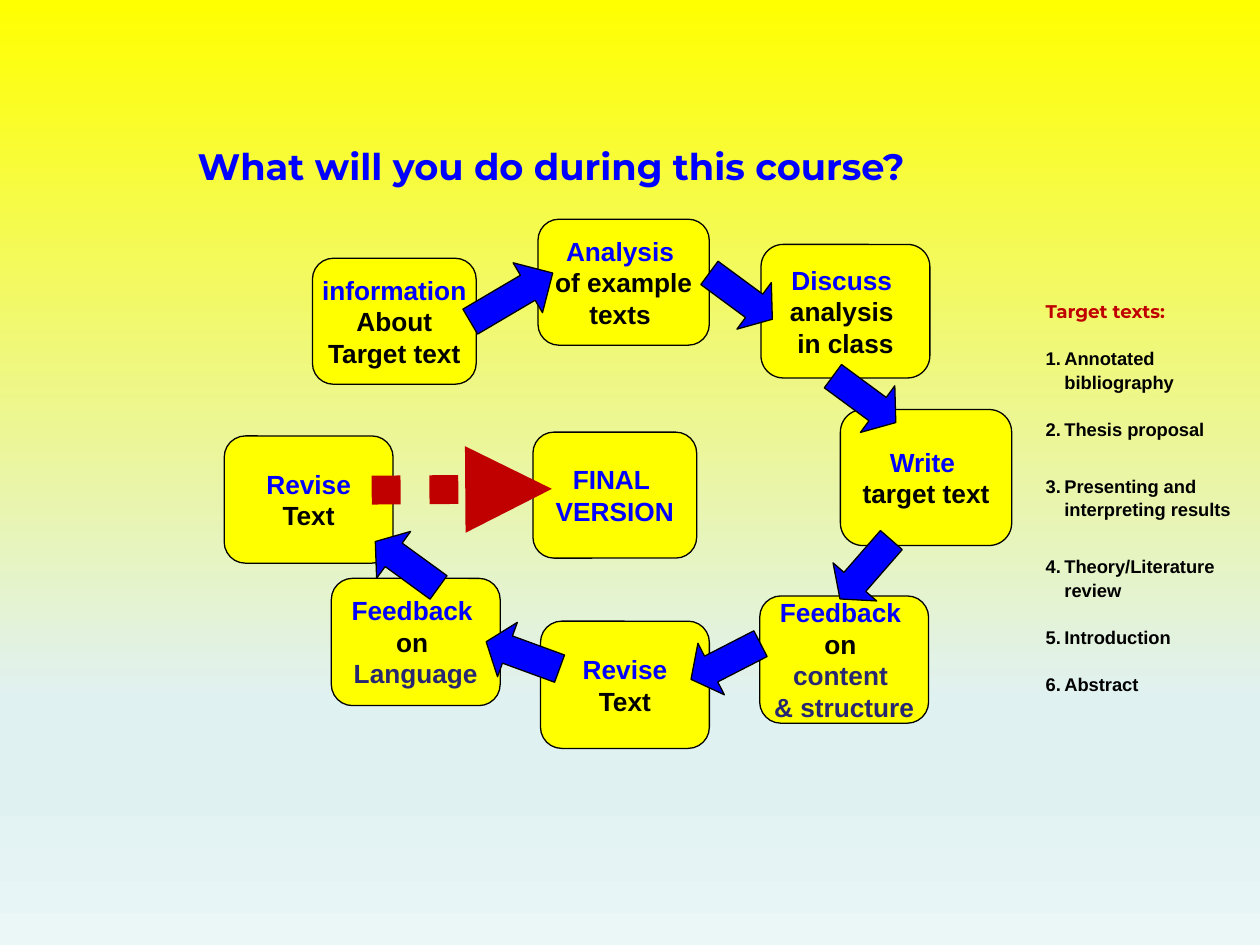
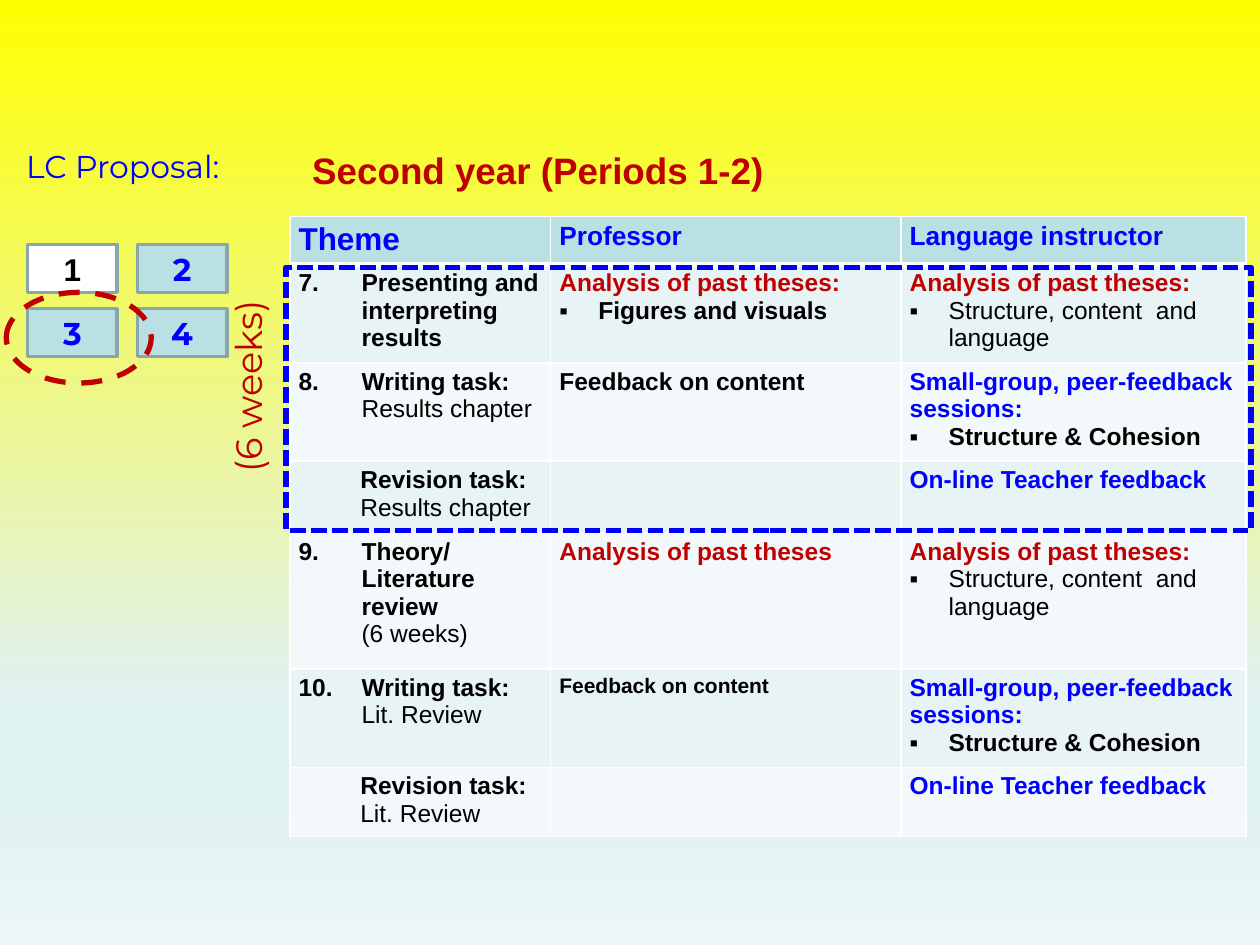
from dataclasses import dataclass, replace

from lxml.etree import SubElement
from pptx import Presentation
from pptx.dml.color import RGBColor
from pptx.enum.dml import MSO_LINE as Dash
from pptx.enum.shapes import MSO_CONNECTOR as Link, MSO_SHAPE as Shape
from pptx.enum.text import MSO_ANCHOR as Anchor, PP_ALIGN as Align
from pptx.oxml.ns import qn
from pptx.util import Inches, Pt

YELLOW = RGBColor(0xFF, 0xFF, 0x00)
BLUE = RGBColor(0x00, 0x00, 0xFF)
NAVY = RGBColor(0x26, 0x26, 0x73)
RED = RGBColor(0xC0, 0x00, 0x00)
BLACK = RGBColor(0x00, 0x00, 0x00)
WHITE = RGBColor(0xFF, 0xFF, 0xFF)
TEAL = RGBColor(0xBB, 0xE0, 0xE3)
TEAL_EDGE = RGBColor(0x8A, 0xA6, 0xA8)
BAND_DARK = RGBColor(0xE7, 0xF3, 0xF4)
BAND_LIGHT = RGBColor(0xF3, 0xF9, 0xFA)
SKY = RGBColor(0xE0, 0xF1, 0xF2)
SKY_PALE = RGBColor(0xEB, 0xF6, 0xF7)

BACKDROP = [(0, YELLOW), (74, SKY), (83, SKY), (100, SKY_PALE)]
COLUMNS, ROWS = 100, 75  # slide grid
CELL = Inches(0.1)
TIGHT = (0.7, 0.4)  # side and top margins


@dataclass
class Box:
    left: float
    top: float
    width: float
    height: float

    def inner(self, left, top, width, height):
        return Box(self.left + left, self.top + top, width, height)

    def emu(self):
        return [round(n * CELL) for n in (self.left, self.top, self.width, self.height)]


@dataclass
class Style:
    size: float
    color: RGBColor = BLACK
    bold: bool = True
    font: str = "Arial"


@dataclass
class Para:
    runs: list  # (text, Style) pairs
    mark: object = None  # bullet sign or first number
    indent: float = 0
    hanging: float = 0
    after: float = 0
    leading: float = 1.0
    align: object = Align.LEFT


def write(frame, paras, margins=None, wrap=True):
    frame.word_wrap = wrap
    if margins:
        frame.margin_left = frame.margin_right = round(margins[0] * CELL)
        frame.margin_top = frame.margin_bottom = round(margins[1] * CELL)
    for index, para in enumerate(paras):
        line = frame.add_paragraph() if index else frame.paragraphs[0]
        line.alignment = para.align
        line.line_spacing = para.leading
        line.space_after = Pt(para.after)
        props = line._p.get_or_add_pPr()
        props.set("marL", str(round(para.indent * CELL)))
        props.set("indent", str(round(-para.hanging * CELL)))
        if isinstance(para.mark, int):
            SubElement(props, qn("a:buFont"), typeface="Arial")
            SubElement(props, qn("a:buAutoNum"), type="arabicPeriod", startAt=str(para.mark))
        elif para.mark:
            SubElement(props, qn("a:buFont"), typeface="Arial")
            SubElement(props, qn("a:buChar"), char=para.mark)
        for text, style in para.runs:
            for order, piece in enumerate(text.split("\n")):
                if order:
                    line.add_line_break()
                if piece:
                    run = line.add_run()
                    run.text = piece
                    run.font.size, run.font.bold = Pt(style.size), style.bold
                    run.font.name, run.font.color.rgb = style.font, style.color


def new_slide(deck):
    slide = deck.slides.add_slide(deck.slide_layouts[6])
    slide.background.fill.gradient()
    slide.background.fill.gradient_angle = 270
    stops = next(slide.element.iter(qn("a:gsLst")))
    stops.clear()
    for share, color in BACKDROP:
        stop = SubElement(stops, qn("a:gs"), pos=str(share * 1000))
        SubElement(stop, qn("a:srgbClr"), val=str(color))
    return slide


def add_text(slide, box, paras):
    frame = slide.shapes.add_textbox(*box.emu()).text_frame
    write(frame, paras)
    return frame


def add_figure(slide, kind, box, fill, edge, weight, dash=None):
    figure = slide.shapes.add_shape(kind, *box.emu())
    figure.shadow.inherit = False
    if fill is None:
        figure.fill.background()
    else:
        figure.fill.solid()
        figure.fill.fore_color.rgb = fill
    figure.line.color.rgb, figure.line.width = edge, Pt(weight)
    if dash:
        figure.line.dash_style = dash
    figure.text_frame.vertical_anchor = Anchor.MIDDLE
    return figure


# Slide 1: the writing cycle
KEY, PLAIN = Style(15, BLUE), Style(15)
FOCUS = Style(15, NAVY)
STAGES = [
    ((7, 3.1, 13, 10), [("information\n", KEY), ("About\nTarget text", PLAIN)]),
    ((24.9, 0, 13.6, 10), [("Analysis \n", KEY), ("of example\ntexts ", PLAIN)]),
    ((42.6, 2, 13.4, 10.6), [("Discuss \n", KEY), ("analysis \nin class", PLAIN)]),
    ((48.9, 15.1, 13.6, 10.8), [("Write \n", KEY), ("target text", PLAIN)]),
    ((42.5, 29.9, 13.4, 10.1),
     [("Feedback \n", KEY), ("on \n", PLAIN), ("content \n& structure", FOCUS)]),
    ((25.1, 31.9, 13.4, 10.1), [("Revise\n", KEY), ("Text", PLAIN)]),
    ((8.5, 28.5, 13.4, 10.1),
     [("Feedback \n", KEY), ("on \n", PLAIN), ("Language", FOCUS)]),
    ((0, 17.2, 13.4, 10.1), [("Revise\n", KEY), ("Text", PLAIN)]),
    ((24.5, 16.9, 13, 10), [("FINAL \nVERSION", KEY)]),
]
# left, top, length, turn, head share
ARROWS = [
    (19, 3.9, 7.6, 329.5, 0.5),
    (37.9, 3.8, 6.2, 36.4, 0.39),
    (47.7, 12, 6.2, 36.4, 0.39),
    (47.8, 25.5, 6.2, 131.1, 0.39),
    (36.7, 32.8, 6.2, 152.8, 0.39),
    (20.6, 32.3, 6.2, 200.1, 0.39),
    (11.4, 25.1, 6.2, 216, 0.39),
]
TARGETS = [("Annotated bibliography", 13.5), ("Thesis proposal", 19),
           ("Presenting and interpreting results", 19),
           ("Theory/Literature review ", 13.5), ("Introduction ", 13.5), ("Abstract", 0)]


def draw_cycle(slide, box):
    for place, runs in STAGES:
        stage = add_figure(slide, Shape.ROUNDED_RECTANGLE, box.inner(*place), YELLOW, BLACK, 0.75)
        write(stage.text_frame, [Para(runs, align=Align.CENTER)], TIGHT, wrap=False)
    for left, top, length, turn, head in ARROWS:
        arrow = add_figure(slide, Shape.RIGHT_ARROW, box.inner(left, top, length, 4.6),
                           BLUE, BLACK, 0.75)
        arrow.rotation = turn
        arrow.adjustments[1] = head
    # Dotted way to the final version
    left, top, run, rise = box.inner(11.7, 21.5, 14.3, -0.1).emu()
    finish = slide.shapes.add_connector(Link.STRAIGHT, left, top, left + run, top + rise)
    finish.line.color.rgb, finish.line.width = RED, Pt(16.5)
    finish.line.dash_style = Dash.ROUND_DOT
    props = finish._element.spPr
    SubElement(props.find(qn("a:ln")), qn("a:tailEnd"), type="triangle")
    SubElement(props, qn("a:effectLst"))


def draw_targets(slide, box):
    heading = Style(10.5, RED, font="Montserrat")
    paras = [Para([("Target texts:", heading)], after=13.5, leading=1.07)]
    paras += [Para([(target, Style(10.5))], 1, 1.5, 1.5, after, 1.07)
              for target, after in TARGETS]
    add_text(slide, box, paras)


def course_slide(deck):
    slide = new_slide(deck)
    title = Style(21, BLUE, font="Montserrat")
    add_text(slide, Box(14.7, 10.9, 71.8, 4.5),
             [Para([("What will you do during this course?", title)])])
    draw_cycle(slide, Box(17.8, 17.4, 62.5, 42))
    draw_targets(slide, Box(82, 23.2, 17.4, 32.9))


# Slide 2: the second-year plan
BODY = Style(14)
LIGHT = replace(BODY, bold=False)
ALERT, ONLINE = Style(14, RED), Style(14, BLUE)


def point(text, style):
    return Para([(text, style)], "▪", 3.1, 3.1)


def theme(number, *runs):
    return [Para(list(runs), number, 5, 5)]


def revision(chapter):
    return [Para([("Revision task:\n", BODY), (chapter, LIGHT)], indent=4.9)]


def note(text, style):
    return [Para([(text, style)])]


PAST = note("Analysis of past theses:", ALERT) + [point("Structure, content  and language", LIGHT)]
PEERS = (note("Small-group, peer-feedback sessions:", ONLINE)
         + [point("Structure & Cohesion", BODY)])
TEACHER = note("On-line Teacher feedback", ONLINE)
PLAN = [
    (3.8, note("Theme", Style(18, BLUE)), note("Professor", KEY), note("Language instructor", KEY)),
    (7.5, theme(7, ("Presenting and interpreting results", BODY)),
     note("Analysis of past theses:", ALERT) + [point("Figures and visuals", BODY)], PAST),
    (7.5, theme(8, ("Writing task: ", BODY), ("Results chapter", LIGHT)),
     note("Feedback on content", BODY), PEERS),
    (5.7, revision("Results chapter"), [], TEACHER),
    (10.8, theme(9, ("Theory/Literature review \n", BODY), ("(6 weeks)", LIGHT)),
     note("Analysis of past theses", ALERT), PAST),
    (7.5, theme(10, ("Writing task: \n", BODY), ("Lit. Review", LIGHT)),
     note("Feedback on content", Style(12)), PEERS),
    (5.3, revision("Lit. Review"), [], TEACHER),
]


def add_borders(cell, bottom):
    props = cell._tc.get_or_add_tcPr()
    for side, weight in (("L", 1), ("R", 1), ("T", 1), ("B", bottom)):
        edge = SubElement(props, qn("a:ln" + side), w=str(Pt(weight)))
        SubElement(SubElement(edge, qn("a:solidFill")), qn("a:srgbClr"), val=str(WHITE))


def draw_plan(slide, box):
    table = slide.shapes.add_table(len(PLAN), 3, *box.emu()).table
    for column, width in zip(table.columns, (20.7, 27.8, 27.4)):
        column.width = round(width * CELL)
    for index, (height, *contents) in enumerate(PLAN):
        table.rows[index].height = round(height * CELL)
        band = (BAND_DARK if index % 2 else BAND_LIGHT) if index else TEAL
        for column, paras in enumerate(contents):
            cell = table.cell(index, column)
            add_borders(cell, 1 if index else 3)
            cell.fill.solid()
            cell.fill.fore_color.rgb = band
            cell.margin_left = cell.margin_right = round(TIGHT[0] * CELL)
            cell.margin_top = cell.margin_bottom = round(TIGHT[1] * CELL)
            write(cell.text_frame, paras)


def draw_periods(slide, box):
    for index in range(4):
        row, column = divmod(index, 2)
        first = index == 0
        tile = add_figure(slide, Shape.RECTANGLE, box.inner(column * 8.7, row * 5.1, 7.1, 3.8),
                          WHITE if first else TEAL, TEAL_EDGE, 2)
        digit = Style(18) if first else Style(18, BLUE, font="Montserrat")
        write(tile.text_frame, [Para([(str(index + 1), digit)], align=Align.CENTER)])
    # Ring around the current period
    add_figure(slide, Shape.OVAL, box.inner(-1.7, 3.8, 11.5, 7.2), None, RED, 3, Dash.DASH)


def plan_slide(deck):
    slide = new_slide(deck)
    add_text(slide, Box(1.1, 11.2, 20, 4),
             note("LC Proposal:", Style(18, BLUE, False, "Montserrat")))
    draw_plan(slide, Box(23, 17.2, 75.9, 48.9))
    draw_periods(slide, Box(2.2, 19.4, 15.8, 8.9))
    add_text(slide, Box(23.8, 11.2, 42, 4.5),
             note("Second year (Periods 1-2)", Style(21, RED)))
    # Six-week block and its upright label
    add_figure(slide, Shape.RECTANGLE, Box(22.7, 21.2, 76.6, 20.9), None, BLUE, 3, Dash.SQUARE_DOT)
    weeks = add_text(slide, Box(17.4, 21.2, 5.6, 17.3),
                     note("(6 weeks)", Style(21, RED, False, "Montserrat")))
    weeks._txBody.bodyPr.set("vert", "vert270")


def main():
    deck = Presentation()
    deck.slide_width, deck.slide_height = COLUMNS * CELL, ROWS * CELL
    course_slide(deck)
    plan_slide(deck)
    deck.save("out.pptx")


if __name__ == "__main__":
    main()
